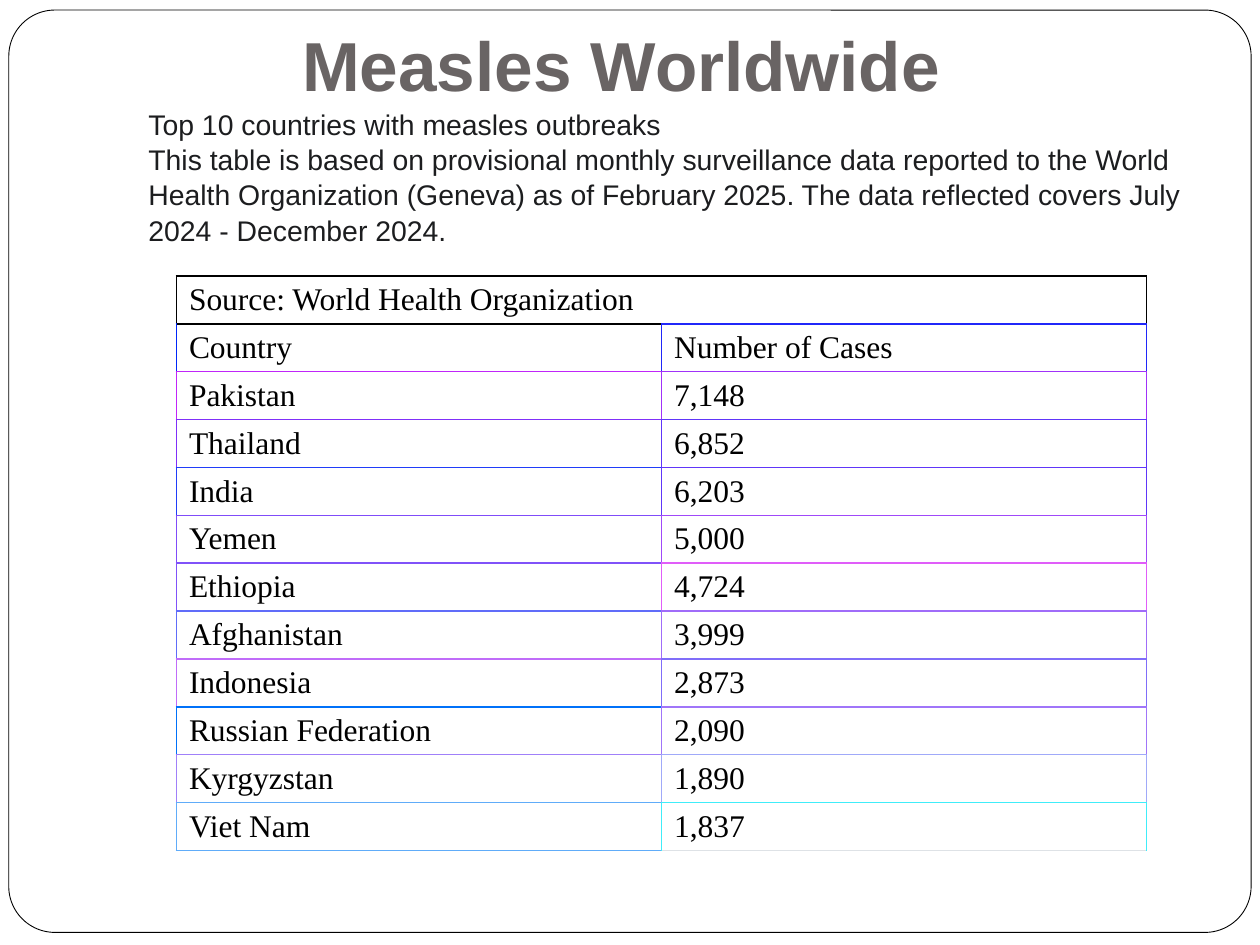
from lxml.etree import SubElement
from pptx import Presentation
from pptx.dml.color import RGBColor
from pptx.enum.shapes import MSO_SHAPE
from pptx.enum.text import MSO_ANCHOR
from pptx.oxml.ns import qn
from pptx.util import Inches, Pt

BLACK = RGBColor(0, 0, 0)
WHITE = RGBColor(255, 255, 255)
GREY = RGBColor(0x69, 0x64, 0x64)
INK = RGBColor(0x1C, 0x1D, 0x1F)
PALE = RGBColor(0xDE, 0xE2, 0xE6)

TITLE = "Measles Worldwide"
INTRO = [
    "Top 10 countries with measles outbreaks",
    "This table is based on provisional monthly surveillance data reported to the World "
    "Health Organization (Geneva) as of February 2025. The data reflected covers July "
    "2024 - December 2024.",
]
SOURCE = "Source: World Health Organization"
ROWS = [
    ("Country", "Number of Cases", "0027F9", "2027F9"),
    ("Pakistan", "7,148", "C025F9", "A031F9"),
    ("Thailand", "6,852", "802FF9", "6035F9"),
    ("India", "6,203", "203DF9", "6036F9"),
    ("Yemen", "5,000", "804CF9", "A049F9"),
    ("Ethiopia", "4,724", "8052F9", "E05DF9"),
    ("Afghanistan", "3,999", "606CF9", "A06CF9"),
    ("Indonesia", "2,873", "C06CF9", "806DF9"),
    ("Russian Federation", "2,090", "0071F9", "A075F9"),
    ("Kyrgyzstan", "1,890", "A080F9", "A0A9F9"),
    ("Viet Nam", "1,837", "60ACF9", "40EDF9"),
]


def style(para, size, color, face="Arial", bold=False):
    """Set the font of a paragraph."""
    font = para.font
    font.name, font.size, font.bold = face, Pt(size), bold
    font.color.rgb = color


def add_frame(slide):
    """Draw the rounded outline around the slide."""
    frame = slide.shapes.add_shape(MSO_SHAPE.ROUNDED_RECTANGLE, Inches(0.07), Inches(0.08),
                                   Inches(9.86), Inches(7.32))
    frame.adjustments[0] = 0.05
    frame.shadow.inherit = False
    frame.fill.solid()
    frame.fill.fore_color.rgb = WHITE
    frame.line.color.rgb = BLACK
    frame.line.width = Pt(0.5)


def add_heading(slide):
    """Write the title and the introduction below it."""
    box = slide.shapes.add_textbox(Inches(1.08), Inches(0.33), Inches(8.5), Inches(1.73))
    text = box.text_frame
    text.word_wrap = True
    text.vertical_anchor = MSO_ANCHOR.BOTTOM
    text.margin_bottom = Inches(0.1)
    title = text.paragraphs[0]
    title.text = TITLE
    title._p.get_or_add_pPr().set("marL", str(Inches(1.22)))
    style(title, 39.6, GREY, bold=True)
    for line in INTRO:
        para = text.add_paragraph()
        para.text = line
        para.line_spacing = 1.04
        style(para, 16.2, INK)


def set_edges(cell, left, right, top, bottom):
    """Colour the four borders of a cell."""
    props = cell._tc.get_or_add_tcPr()
    edges = zip(("a:lnL", "a:lnR", "a:lnT", "a:lnB"), (left, right, top, bottom))
    for place, (tag, color) in enumerate(edges):
        line = SubElement(props, qn(tag), w=str(Pt(1)))
        fill = SubElement(line, qn("a:solidFill"))
        SubElement(fill, qn("a:srgbClr"), val=str(color))
        props.insert(place, line)


def fill_cell(cell, words, *edges):
    """Write one table cell and draw its borders."""
    cell.text = words
    cell.margin_top = cell.margin_bottom = Inches(0.04)
    cell.vertical_anchor = MSO_ANCHOR.MIDDLE
    cell.fill.solid()
    cell.fill.fore_color.rgb = WHITE
    style(cell.text_frame.paragraphs[0], 18, BLACK, "Times New Roman")
    set_edges(cell, *edges)


def add_cases(slide):
    """Build the table of cases by country."""
    table = slide.shapes.add_table(len(ROWS) + 1, 2, Inches(1.4), Inches(2.19),
                                   Inches(7.7), Inches(4.52)).table
    table.first_row = table.horz_banding = False
    for col in (0, 1):
        fill_cell(table.cell(0, col), "" if col else SOURCE, *[BLACK] * 4)
    table.cell(0, 0).merge(table.cell(0, 1))
    below = [row[2:] for row in ROWS[1:]] + [(ROWS[-1][2], PALE)]
    for num, (row, under) in enumerate(zip(ROWS, below), 1):
        land, cases, left, right = row
        top = BLACK if num == 1 else left
        fill_cell(table.cell(num, 0), land, left, right, top, under[0])
        fill_cell(table.cell(num, 1), cases, right, right, right, under[1])


def main():
    """Build the slide and save it."""
    deck = Presentation()
    deck.slide_width, deck.slide_height = Inches(10), Inches(7.5)
    slide = deck.slides.add_slide(deck.slide_layouts[6])
    add_frame(slide)
    add_heading(slide)
    add_cases(slide)
    deck.save("out.pptx")


if __name__ == "__main__":
    main()
